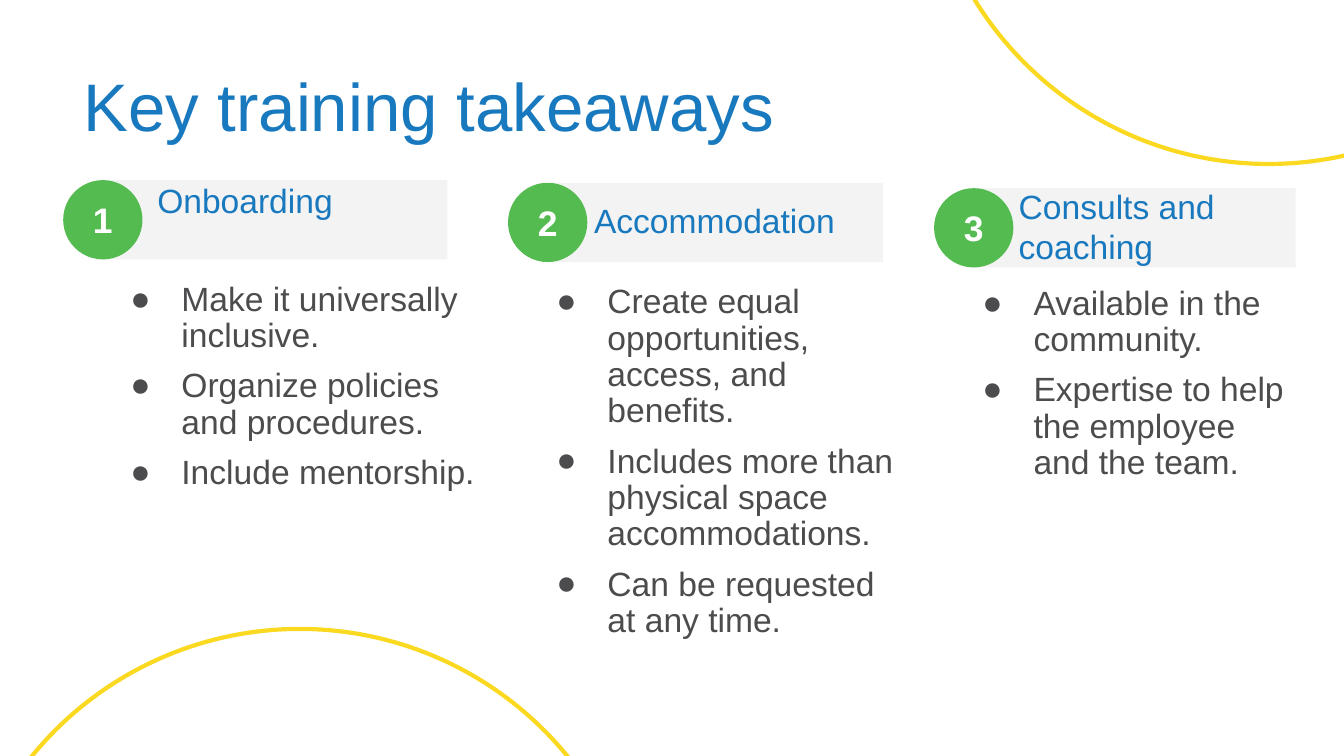
from lxml import etree
from pptx import Presentation
from pptx.dml.color import RGBColor
from pptx.enum.shapes import MSO_SHAPE
from pptx.enum.text import MSO_ANCHOR, MSO_AUTO_SIZE, PP_ALIGN
from pptx.oxml.ns import qn
from pptx.util import Inches, Pt

RECT, OVAL = MSO_SHAPE.RECTANGLE, MSO_SHAPE.OVAL
TOP, MIDDLE = MSO_ANCHOR.TOP, MSO_ANCHOR.MIDDLE
LEFT, CENTER = PP_ALIGN.LEFT, PP_ALIGN.CENTER
NO_FIT = MSO_AUTO_SIZE.NONE

FONT = "Arial"
COLORS = {
    "blue": "1979BE",
    "green": "53BB50",
    "yellow": "FAD920",
    "bar": "F3F3F3",
    "text": "4C4C4E",
    "white": "FFFFFF",
}
BADGE_SIZE = 0.59
RING_SIZE = 5.14
RINGS = [(6.87, -3.92), (-0.34, 4.68)]

# Boxes are (left, top, width, height); insets are (left, top, right, bottom)
COLUMNS = [
    {
        "bar": (0.75, 1.34, 2.58, 0.59), "badge_left": 0.47,
        "heading": ["Onboarding"], "heading_box": (0.79, 1.34, 2.58, 0.59),
        "heading_indent": 0.38, "anchor": TOP,
        "list_box": (0.75, 2, 2.92, 1.9), "list_inset": 0.1,
        "points": ["Make it universally inclusive.",
                   "Organize policies and procedures.",
                   "Include mentorship."],
    },
    {
        "bar": (4.12, 1.36, 2.45, 0.59), "badge_left": 3.78,
        "heading": ["Accommodation"], "heading_box": (4.11, 1.34, 2.45, 0.59),
        "heading_indent": 0.31, "anchor": MIDDLE,
        "list_box": (3.92, 2.02, 2.94, 2.99), "list_inset": 0.1,
        "points": ["Create equal opportunities, access, and benefits.",
                   "Includes more than physical space accommodations.",
                   "Can be requested at any time."],
    },
    {
        "bar": (7.24, 1.4, 2.4, 0.59), "badge_left": 6.95,
        "heading": ["Consults and", "coaching"],
        "heading_box": (7.27, 1.38, 2.4, 0.69),
        "heading_indent": 0.31, "anchor": TOP,
        "list_box": (7.09, 2.08, 2.58, 2.84), "list_inset": 0.05,
        "points": ["Available in the community.",
                   "Expertise to help the employee and the team."],
    },
]


def rgb(color):
    return RGBColor.from_string(COLORS[color])


def place(shape, box):
    shape.left, shape.top, shape.width, shape.height = map(Inches, box)


def set_frame(frame, anchor, insets):
    frame.word_wrap = True
    frame.auto_size = NO_FIT
    frame.vertical_anchor = anchor
    (frame.margin_left, frame.margin_top,
     frame.margin_right, frame.margin_bottom) = map(Inches, insets)


def add_run(paragraph, text, size, color, bold=False):
    run = paragraph.add_run()
    run.text = text
    run.font.name = FONT
    run.font.size = Pt(size)
    run.font.bold = bold
    run.font.color.rgb = rgb(color)


def write_lines(frame, lines, size, color):
    """Put each line in its own paragraph and return the paragraphs."""
    for index, line in enumerate(lines):
        paragraph = frame.add_paragraph() if index else frame.paragraphs[0]
        paragraph.alignment = LEFT
        add_run(paragraph, line, size, color)
    return frame.paragraphs


def add_bullet(paragraph):
    props = paragraph._p.get_or_add_pPr()
    props.set("marL", str(Inches(0.5)))
    props.set("indent", str(Inches(-0.38)))
    bullet_color = etree.SubElement(props, qn("a:buClr"))
    etree.SubElement(bullet_color, qn("a:srgbClr"), val=COLORS["text"])
    etree.SubElement(props, qn("a:buFont"), typeface=FONT)
    etree.SubElement(props, qn("a:buChar"), char="●")


def add_filled(slide, preset, box, color):
    shape = slide.shapes.add_shape(preset, *map(Inches, box))
    shape.shadow.inherit = False
    shape.fill.solid()
    shape.fill.fore_color.rgb = rgb(color)
    shape.line.fill.background()
    return shape


def add_ring(slide, left, top):
    ring = slide.shapes.add_shape(
        OVAL, *map(Inches, (left, top, RING_SIZE, RING_SIZE)))
    ring.shadow.inherit = False
    ring.fill.background()
    ring.line.color.rgb = rgb("yellow")
    ring.line.width = Pt(2.25)


def add_badge(slide, number, left, top):
    badge = add_filled(slide, OVAL, (left, top, BADGE_SIZE, BADGE_SIZE), "green")
    set_frame(badge.text_frame, MIDDLE, (0, 0, 0, 0))
    paragraph = badge.text_frame.paragraphs[0]
    paragraph.alignment = CENTER
    add_run(paragraph, str(number), 19, "white", bold=True)


def add_heading(slide, column):
    heading = slide.shapes.add_textbox(*map(Inches, column["heading_box"]))
    set_frame(heading.text_frame, column["anchor"],
              (column["heading_indent"], 0, 0.1, 0))
    write_lines(heading.text_frame, column["heading"], 18, "blue")


def fill_title(title, text):
    place(title, (0.52, 0.27, 8.62, 1.09))
    set_frame(title.text_frame, MIDDLE, (0.1, 0.05, 0.1, 0.05))
    paragraph = write_lines(title.text_frame, [text], 36, "blue")[0]
    paragraph.line_spacing = 0.9


def fill_list(body, column):
    inset = column["list_inset"]
    place(body, column["list_box"])
    set_frame(body.text_frame, TOP, (0.1, inset, 0.1, inset))
    points = write_lines(body.text_frame, column["points"], 18, "text")
    for index, paragraph in enumerate(points):
        add_bullet(paragraph)
        paragraph.line_spacing = 0.9
        paragraph.space_before = Pt(7.5 if index else 0)


def main():
    deck = Presentation()
    # Widescreen, 16:9
    deck.slide_width = Inches(10)
    deck.slide_height = deck.slide_width * 9 // 16
    # The comparison layout offers a title and four body placeholders
    slide = deck.slides.add_slide(deck.slide_layouts[4])
    title, *bodies = slide.placeholders
    fill_title(title, "Key training takeaways")

    # Numbered columns
    for number, (column, body) in enumerate(zip(COLUMNS, bodies), start=1):
        add_filled(slide, RECT, column["bar"], "bar")
        add_badge(slide, number, column["badge_left"], column["bar"][1])
        add_heading(slide, column)
        fill_list(body, column)

    # Unused body placeholders
    for spare in bodies[len(COLUMNS):]:
        spare.element.getparent().remove(spare.element)

    # Decorative rings
    for left, top in RINGS:
        add_ring(slide, left, top)

    deck.save("out.pptx")


if __name__ == "__main__":
    main()
